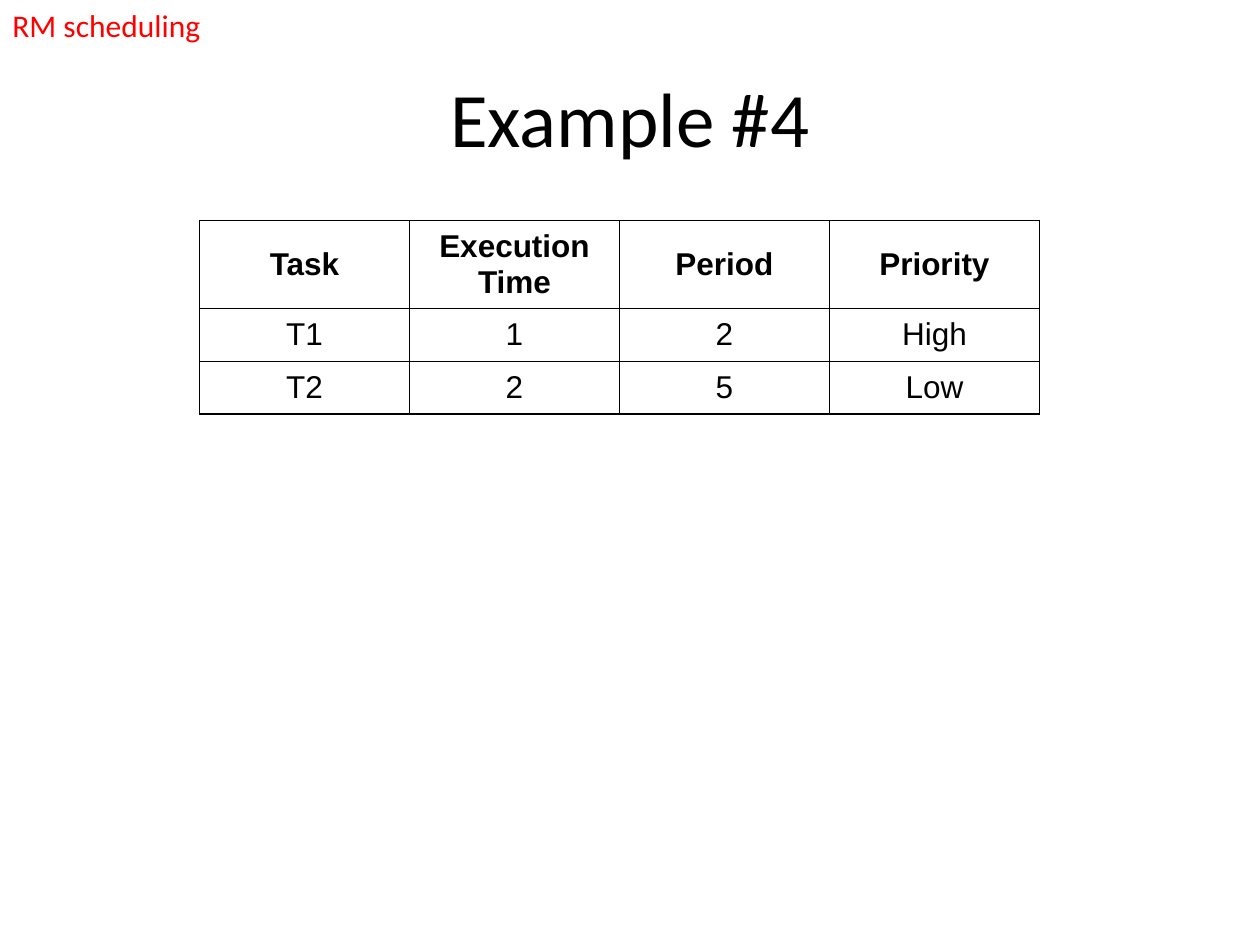
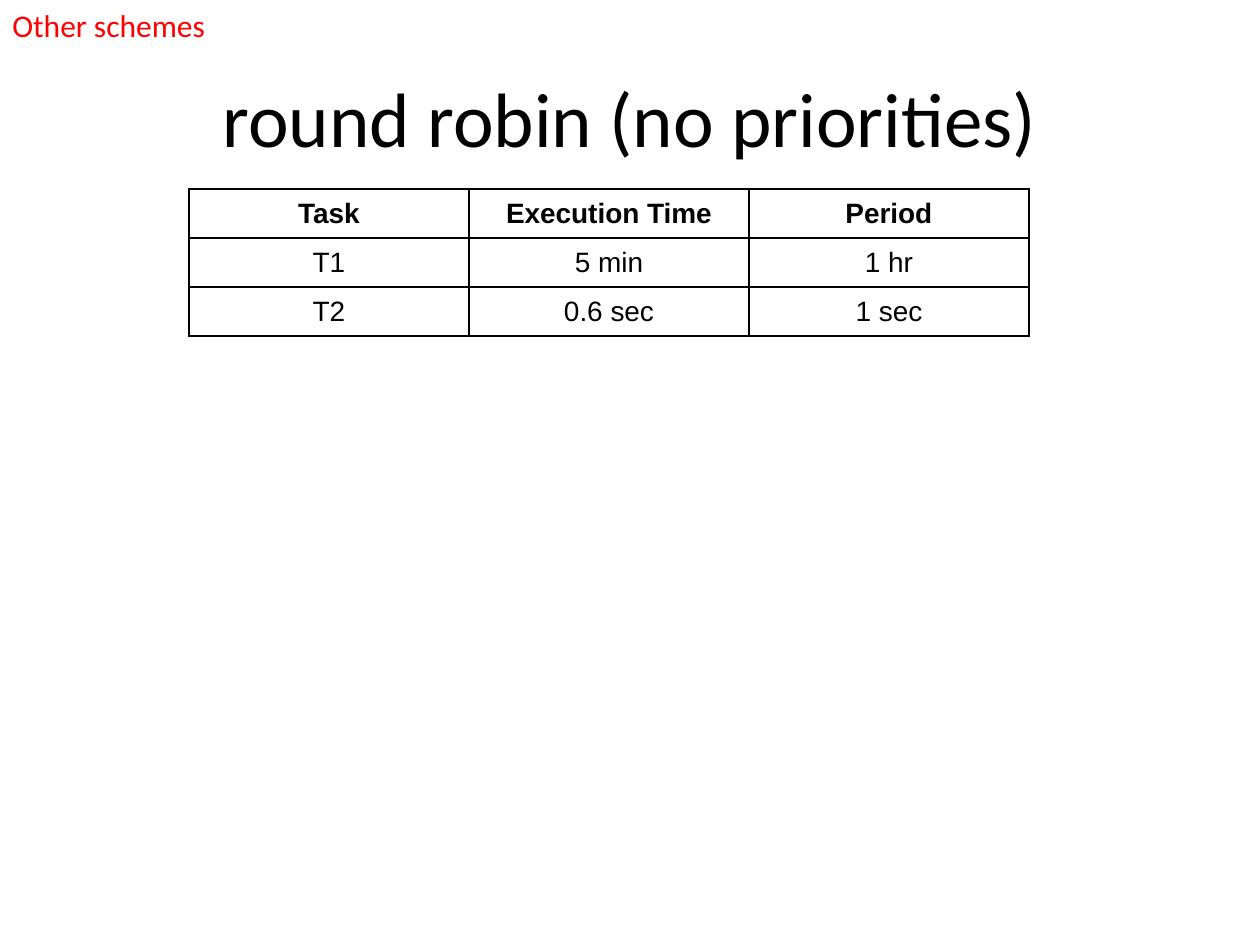
from lxml.etree import SubElement
from pptx import Presentation
from pptx.dml.color import RGBColor
from pptx.enum.text import MSO_ANCHOR, PP_ALIGN
from pptx.oxml.ns import qn
from pptx.util import Pt

BLACK, WHITE, RED = "000000", "FFFFFF", "FF0000"
TITLE_BOX = (36, 21.6, 648, 90)
TABLE_WIDTH = 480
CELL_MARGIN = 5

SLIDES = [
    {
        "topic": "RM scheduling",
        "topic_width": 123,
        "title": "Example #4",
        "rows": [
            ("Task", "Execution Time", "Period", "Priority"),
            ("T1", "1", "2", "High"),
            ("T2", "2", "5", "Low"),
        ],
        "corner": (114, 126),
        "row_heights": (50, 30, 30),
        "size": 18,
    },
    {
        "topic": "Other schemes",
        "topic_width": 126,
        "title": "round robin (no priorities)",
        "rows": [
            ("Task", "Execution Time", "Period"),
            ("T1", "5 min", "1 hr"),
            ("T2", "0.6 sec", "1 sec"),
        ],
        "corner": (108, 108),
        "row_heights": (28, 28, 28),
        "size": 16,
    },
]


def rgb(color):
    return RGBColor.from_string(color)


def set_font(p, name, size, color, bold=False):
    p.font.name = name
    p.font.size = Pt(size)
    p.font.color.rgb = rgb(color)
    p.font.bold = bold


def add_title(slide, text):
    sp = slide.shapes.title
    sp.left, sp.top, sp.width, sp.height = map(Pt, TITLE_BOX)
    tf = sp.text_frame
    tf.text = text
    tf.vertical_anchor = MSO_ANCHOR.MIDDLE
    p = tf.paragraphs[0]
    p.alignment = PP_ALIGN.CENTER
    set_font(p, "Calibri", 44, BLACK)


def add_topic(slide, text, width):
    """Label the section in the top left corner."""
    tf = slide.shapes.add_textbox(0, 0, Pt(width), Pt(29)).text_frame
    tf.word_wrap = False
    tf.text = text
    set_font(tf.paragraphs[0], "Calibri", 18, RED)


def add_borders(cell):
    tc_pr = cell._tc.get_or_add_tcPr()
    for side in ("lnL", "lnR", "lnT", "lnB"):
        ln = SubElement(tc_pr, qn(f"a:{side}"), w=str(Pt(1)))
        fill = SubElement(ln, qn("a:solidFill"))
        SubElement(fill, qn("a:srgbClr"), val=BLACK)


def format_cell(cell, text, size, bold):
    cell.text = text
    cell.vertical_anchor = MSO_ANCHOR.MIDDLE
    cell.margin_left = cell.margin_right = Pt(CELL_MARGIN)
    cell.margin_top = cell.margin_bottom = Pt(CELL_MARGIN)
    p = cell.text_frame.paragraphs[0]
    p.alignment = PP_ALIGN.CENTER
    set_font(p, "Arial", size, BLACK, bold)
    add_borders(cell)
    cell.fill.solid()
    cell.fill.fore_color.rgb = rgb(WHITE)


def add_task_table(slide, rows, corner, row_heights, size):
    left, top = corner
    table = slide.shapes.add_table(
        len(rows), len(rows[0]), Pt(left), Pt(top),
        Pt(TABLE_WIDTH), Pt(sum(row_heights))).table
    table.first_row = table.horz_banding = False
    for column in table.columns:
        column.width = Pt(TABLE_WIDTH / len(rows[0]))
    for i, (texts, height) in enumerate(zip(rows, row_heights)):
        table.rows[i].height = Pt(height)
        for j, text in enumerate(texts):
            format_cell(table.cell(i, j), text, size, bold=i == 0)


def main():
    prs = Presentation()
    prs.slide_width, prs.slide_height = Pt(720), Pt(540)
    title_only = prs.slide_layouts[5]
    for content in SLIDES:
        slide = prs.slides.add_slide(title_only)
        add_title(slide, content["title"])
        add_task_table(slide, content["rows"], content["corner"],
                       content["row_heights"], content["size"])
        add_topic(slide, content["topic"], content["topic_width"])
    prs.save("out.pptx")


if __name__ == "__main__":
    main()
